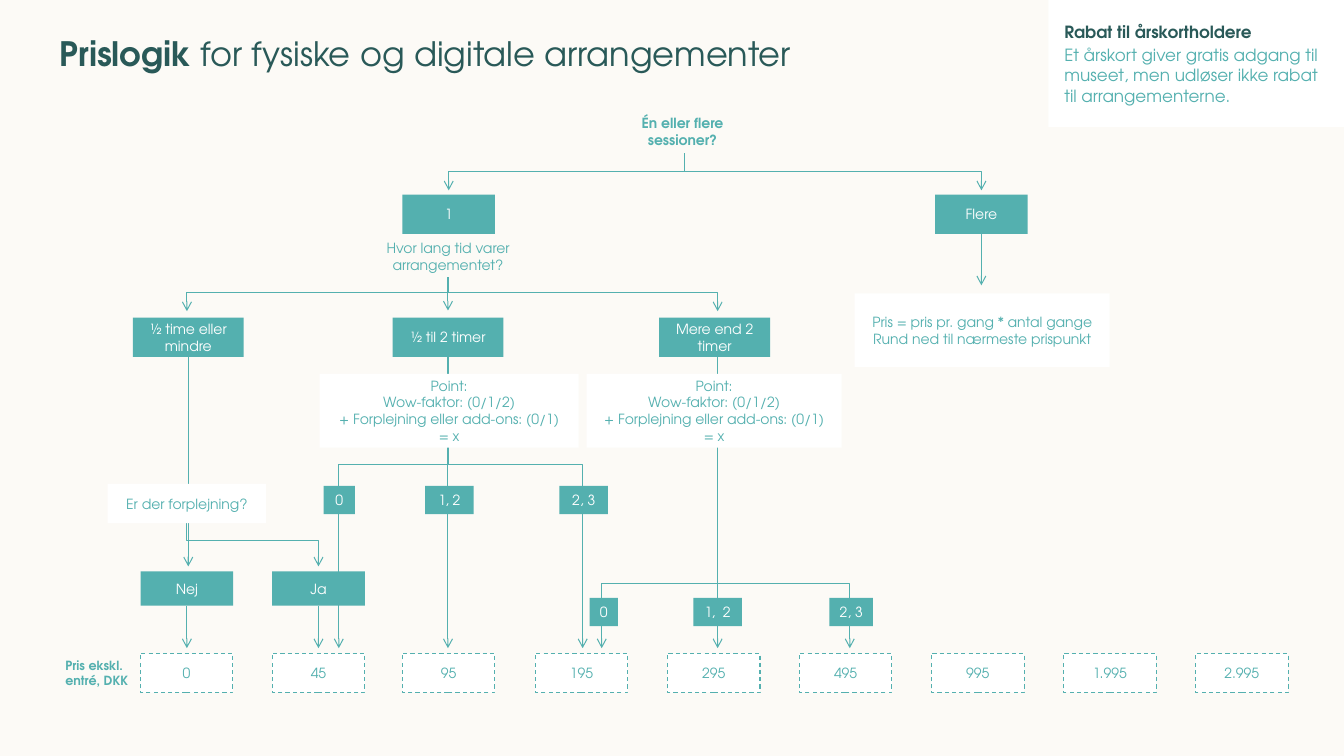
from lxml import etree
from pptx import Presentation
from pptx.dml.color import RGBColor
from pptx.enum import dml, shapes, text
from pptx.oxml.ns import qn
from pptx.util import Pt

# Content: lengths in points
FONT = "TeX Gyre Adventor"
TEAL, DARK, WHITE, CREAM = "54B0AF", "295958", "FFFFFF", "FCFAF6"
POINTS = ["Point:", "Wow-faktor: (0/1/2)", "+ Forplejning eller add-ons: (0/1)", "= x"]
LEFT, MIDDLE, RIGHT, MULTIPLE = 133.5, 320, 512.6, 701  # axes of the branches

STYLES = {
    "answer": dict(fill=TEAL, color=WHITE),
    "score": dict(fill=TEAL, color=WHITE, wrap=False),
    "note": dict(fill=WHITE, color=TEAL),
    "question": dict(fill=CREAM, color=TEAL),
    "price": dict(fill=WHITE, color=TEAL, dashed=True),
}

# key: (style, lines, centre, top, width, height)
STEPS = {
    "one": ("answer", ["1"], MIDDLE + 0.5, 139, 66.2, 28.1),
    "several": ("answer", ["Flere"], MULTIPLE, 139, 66.2, 28.1),
    "duration": ("question", ["Hvor lang tid varer arrangementet?"], MIDDLE, 168.5, 121, 29.5),
    "short": ("answer", ["½ time eller mindre"], LEFT + 1, 226.8, 79.2, 28.1),
    "medium": ("answer", ["½ til 2 timer"], MIDDLE, 226.8, 79.2, 28.1),
    "long": ("answer", ["Mere end 2 timer"], 510.5, 226.8, 79.2, 28.1),
    "no": ("answer", ["Nej"], LEFT, 408.2, 66.2, 24.5),
    "yes": ("answer", ["Ja"], 227.5, 408.2, 66.2, 24.5),
    "rule": ("note", ["Pris = pris pr. gang * antal gange", "Rund ned til nærmeste prispunkt"],
             MULTIPLE + 0.6, 209.5, 182.2, 52.6),
}
# Steps that the lines pass behind
CROSSED_STEPS = [
    ("note", ["Er der forplejning?"], LEFT, 345.6, 113, 28.1),
    ("note", POINTS, 320.8, 267.1, 185, 52.6),
    ("note", POINTS, 510.1, 267.1, 182.2, 52.6),
    ("score", ["0"], 242.3, 347, 22.3, 20.2),
    ("score", ["1, 2"], 321, 347, 34.6, 20.2),
    ("score", ["2, 3"], 416.9, 347, 34.6, 20.2),
    ("score", ["0"], 431.3, 427, 20.2, 20.2),
    ("score", ["1,  2"], RIGHT, 427, 34.6, 20.2),
    ("score", ["2, 3"], 608, 427, 31, 20.2),
]
PRICES = {"0": 133.3, "45": 227.5, "95": 320.4, "195": 415.4, "295": 509.8,
          "495": 604, "995": 698.4, "1.995": 792.7, "2.995": 887}

PRICE_ARROW_END = 463
# (start x, start y, turn y, end y, end xs)
FORKS = [
    (489, 109.4, 122.4, 136, [MIDDLE + 0.5, MULTIPLE]),
    (MIDDLE, 198, 208.8, 222.3, [LEFT, RIGHT]),
    (LEFT, 373.7, 386, 404.6, [227.5]),
    (MIDDLE, 254.9, 331.9, PRICE_ARROW_END, [242, 416.2]),
    (RIGHT, 254.9, 416.9, PRICE_ARROW_END, [429.8, 607]),
]
# step the arrow leaves: end y
STEP_ARROWS = {"several": 203.8, "duration": 221.8, "short": 404.6, "medium": PRICE_ARROW_END,
               "no": PRICE_ARROW_END, "yes": PRICE_ARROW_END}

prs = Presentation()
prs.slide_width, prs.slide_height = Pt(960), Pt(540)
slide = prs.slides.add_slide(prs.slide_layouts[6])


def rgb(value):
    return RGBColor.from_string(value)


def write(frame, paragraphs, align=text.PP_ALIGN.CENTER, anchor=text.MSO_ANCHOR.MIDDLE,
          insets=(7.2, 3.6, 7.2, 3.6), wrap=True, **spacing):
    """Each paragraph is a list of (text, size, colour, bold) runs."""
    frame.word_wrap, frame.vertical_anchor = wrap, anchor
    for side, inset in zip(("left", "top", "right", "bottom"), insets):
        setattr(frame, "margin_" + side, Pt(inset))
    for number, runs in enumerate(paragraphs):
        paragraph = frame.add_paragraph() if number else frame.paragraphs[0]
        paragraph.alignment = align
        for name, value in spacing.items():
            if number or name != "space_before":
                setattr(paragraph, name, Pt(value))
        for words, size, color, bold in runs:
            run = paragraph.add_run()
            run.text = words
            for name, value in dict(name=FONT, size=Pt(size), bold=bold).items():
                setattr(run.font, name, value)
            run.font.color.rgb = rgb(color)


def rectangle(left, top, width, height, fill, dashed=False):
    box = slide.shapes.add_shape(shapes.MSO_SHAPE.RECTANGLE, Pt(left), Pt(top), Pt(width), Pt(height))
    box.shadow.inherit = False
    box.fill.solid()
    box.fill.fore_color.rgb = rgb(fill)
    if dashed:
        box.line.color.rgb, box.line.width = rgb(TEAL), Pt(0.75)
        box.line.dash_style = dml.MSO_LINE.DASH
    else:
        box.line.fill.background()
    return box


def step(style, lines, centre, top, width, height):
    look = STYLES[style]
    box = rectangle(centre - width / 2, top, width, height, look["fill"], look.get("dashed", False))
    write(box.text_frame, [[(line, 10, look["color"], False)] for line in lines],
          wrap=look.get("wrap", True))
    return box


def arrow(kind, x1, y1, x2, y2):
    line = slide.shapes.add_connector(kind, Pt(x1), Pt(y1), Pt(x2), Pt(y2))
    line.line.color.rgb, line.line.width = rgb(TEAL), Pt(0.75)
    etree.SubElement(line.line._get_or_add_ln(), qn("a:tailEnd"), type="arrow")
    etree.SubElement(line._element.spPr, qn("a:effectLst"))
    return line


def fork_arrow(x1, y1, turn, x2, y2):
    """Elbow that goes down, sideways at turn, then down: a rotated connector."""
    run, drop = abs(x2 - x1), y2 - y1
    mid_x, mid_y = (x1 + x2) / 2, (y1 + y2) / 2
    half = drop / 2 if x2 < x1 else -drop / 2
    line = arrow(shapes.MSO_CONNECTOR.ELBOW, mid_x - half, mid_y - run / 2, mid_x + half, mid_y + run / 2)
    properties = line._element.spPr
    properties.find(qn("a:xfrm")).set("rot", "5400000" if x2 < x1 else "16200000")
    adjustments = properties.find(qn("a:prstGeom")).find(qn("a:avLst"))
    etree.SubElement(adjustments, qn("a:gd"), name="adj1", fmla=f"val {round((turn - y1) / drop * 100000)}")


# Page with title, and discount panel
page = rectangle(0, 0, 960, 540, CREAM)
write(page.text_frame,
      [[("Prislogik", 24, DARK, True), (" for fysiske og digitale arrangementer", 24, DARK, False)]],
      text.PP_ALIGN.JUSTIFY, text.MSO_ANCHOR.TOP, (42.5, 34, 42.5, 42.5), line_spacing=18)
discount = rectangle(748.8, 0, 211.2, 90.7, WHITE)
write(discount.text_frame,
      [[("Rabat til årskortholdere", 12, DARK, True)],
       [("Et årskort giver gratis adgang til museet, men udløser ikke rabat til arrangementerne.",
         12, TEAL, False)]],
      text.PP_ALIGN.LEFT, insets=(11.5,) * 4, space_before=2.4)

# Labels
sessions = slide.shapes.add_textbox(Pt(427), Pt(85.7), Pt(121), Pt(16.6))
write(sessions.text_frame, [[("Én eller flere sessioner?", 10, TEAL, True)]])
price_label = slide.shapes.add_textbox(Pt(39.6), Pt(461.5), Pt(73.4), Pt(38.9))
write(price_label.text_frame, [[("Pris ekskl. entré, DKK", 9, TEAL, True)]], text.PP_ALIGN.LEFT)

# Price row
for price, centre in PRICES.items():
    step("price", [price], centre, 466.6, 66.2, 28.1)

# Decision tree: steps, arrows, then the steps lying on the arrows
steps = {key: step(*values) for key, values in STEPS.items()}
for x, start, turn, end, targets in FORKS:
    for target in targets:
        fork_arrow(x, start, turn, target, end)
for key, end in STEP_ARROWS.items():
    _, _, centre, top, _, height = STEPS[key]
    arrow(shapes.MSO_CONNECTOR.STRAIGHT, centre, top + height, centre, end).begin_connect(steps[key], 2)
arrow(shapes.MSO_CONNECTOR.STRAIGHT, RIGHT, 254.9, RIGHT, PRICE_ARROW_END)
for values in CROSSED_STEPS:
    step(*values)

prs.save("out.pptx")
